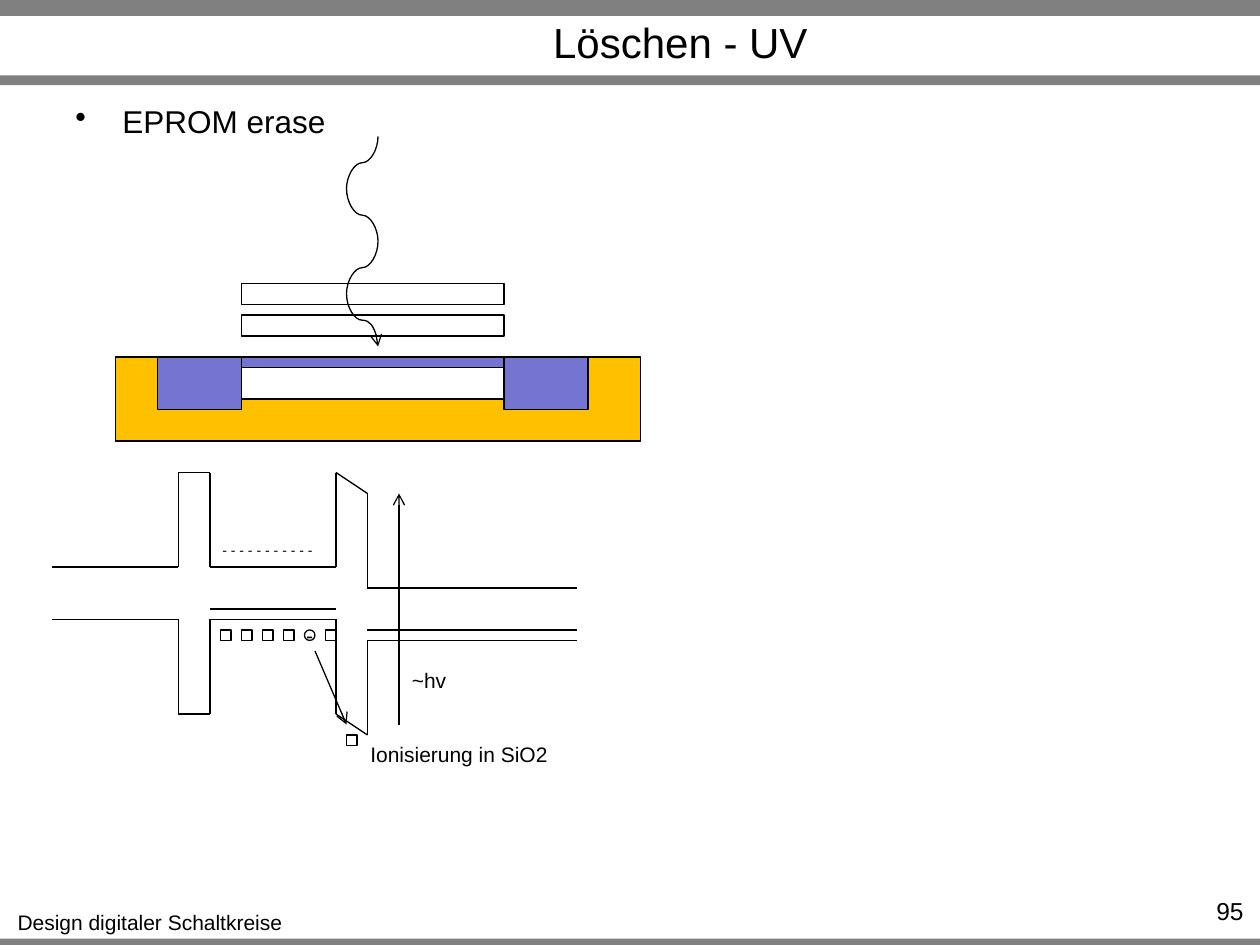
"""Build the slide on erasing an EPROM cell with UV light."""
from dataclasses import dataclass
from itertools import pairwise
from typing import Optional

from lxml import etree
from pptx import Presentation
from pptx import util as u
from pptx.dml.color import RGBColor
from pptx.enum import shapes, text
from pptx.oxml import ns

BLACK = RGBColor(0, 0, 0)
WHITE = RGBColor(0xFF, 0xFF, 0xFF)
GRAY = RGBColor(0x80, 0x80, 0x80)
SUBSTRATE = RGBColor(0xFF, 0xC0, 0x00)
DOPED = RGBColor(0x75, 0x75, 0xD1)
FONT = "Arial"
GRID_CM = 2.54 / 12
LEFT, CENTER, RIGHT = text.PP_ALIGN.LEFT, text.PP_ALIGN.CENTER, text.PP_ALIGN.RIGHT
RECT, OVAL = shapes.MSO_SHAPE.RECTANGLE, shapes.MSO_SHAPE.OVAL
STRAIGHT, CURVE = shapes.MSO_CONNECTOR.STRAIGHT, shapes.MSO_CONNECTOR.CURVE


@dataclass
class Block:
    """A shape placed in grid steps of a twelfth of an inch."""
    left: float
    top: float
    width: float
    height: float
    fill: Optional[RGBColor] = None
    kind: int = RECT


@dataclass
class Label:
    """A text box placed in centimetres."""
    words: str
    left: float
    top: float
    width: float
    height: float
    size: int = 12
    align: int = CENTER
    wrap: bool = False


def grid(steps: float) -> u.Length:
    return u.Cm(steps * GRID_CM)


def write(paragraph, words: str, size: int, align: int) -> None:
    paragraph.alignment = align
    run = paragraph.add_run()
    run.text = words
    run.font.name = FONT
    run.font.size = u.Pt(size)
    run.font.color.rgb = BLACK


def paint(shape, fill: Optional[RGBColor], outlined: bool = True) -> None:
    shape.shadow.inherit = False
    if fill is None:
        shape.fill.background()
    else:
        shape.fill.solid()
        shape.fill.fore_color.rgb = fill
    if outlined:
        shape.line.color.rgb = BLACK
        shape.line.width = u.Pt(0.75)
    else:
        shape.line.fill.background()


def draw_block(slide, block: Block):
    shape = slide.shapes.add_shape(block.kind, grid(block.left), grid(block.top),
                                   grid(block.width), grid(block.height))
    paint(shape, block.fill)
    return shape


def draw_bar(slide, top: float, height: float) -> None:
    bar = slide.shapes.add_shape(RECT, 0, u.Cm(top), u.Cm(25.4), u.Cm(height))
    paint(bar, GRAY, outlined=False)


def draw_label(slide, label: Label):
    box = slide.shapes.add_textbox(u.Cm(label.left), u.Cm(label.top),
                                   u.Cm(label.width), u.Cm(label.height))
    box.text_frame.word_wrap = label.wrap
    paragraph = box.text_frame.paragraphs[0]
    write(paragraph, label.words, label.size, label.align)
    return paragraph


def draw_line(slide, start: tuple, end: tuple, arrow: bool = False, kind: int = STRAIGHT):
    line = slide.shapes.add_connector(kind, *map(grid, start + end))
    line.line.color.rgb = BLACK
    line.line.width = u.Pt(0.75)
    if arrow:
        etree.SubElement(line.line._get_or_add_ln(), ns.qn("a:tailEnd"), type="arrow")
    etree.SubElement(line._element.spPr, ns.qn("a:effectLst"))
    return line


def draw_wave(slide, left: float, top: float, turns: int) -> None:
    for turn in reversed(range(turns)):
        middle = top + 5 * turn + 1
        near, far = (left, middle), (left + 5, middle + 3)
        flipped = turn % 2 == 1
        if flipped:
            near, far = (left + 5, middle), (left, middle + 3)
        half_wave = draw_line(slide, near, far, turn == turns - 1, CURVE)
        half_wave._element.spPr.find(ns.qn("a:xfrm")).set(
            "rot", str((270 if flipped else 90) * 60000))


def add_bullet(paragraph) -> None:
    properties = paragraph._p.get_or_add_pPr()
    indent = u.Cm(0.95)
    properties.set("marL", str(indent))
    properties.set("indent", str(-indent))
    etree.SubElement(properties, ns.qn("a:buChar"), char="•")


def draw_transistor(slide) -> None:
    for block in (
        Block(11, 34, 50, 8, SUBSTRATE),
        Block(23, 27, 25, 2),
        Block(48, 34, 8, 5, DOPED),
        Block(15, 34, 8, 5, DOPED),
        Block(23, 34, 25, 4, WHITE),
        Block(23, 34, 25, 1, DOPED),
        Block(23, 30, 25, 2),
    ):
        draw_block(slide, block)
    draw_line(slide, (15, 34), (56, 34))


def draw_band_diagram(slide) -> None:
    conduction_band = [(5, 54), (17, 54), (17, 45), (20, 45), (20, 54),
                       (32, 54), (32, 45), (35, 47), (35, 56), (55, 56)]
    valence_band = [(5, 59), (17, 59), (17, 68), (20, 68), (20, 59),
                    (32, 59), (32, 68), (35, 70), (35, 61), (55, 61)]
    gate_level = [(20, 58), (32, 58)]
    bulk_level = [(35, 60), (55, 60)]
    for outline in (conduction_band, valence_band, gate_level, bulk_level):
        for start, end in pairwise(outline):
            draw_line(slide, start, end)

    holes = [(column, 60) for column in (21, 23, 25, 27, 31)] + [(33, 70)]
    for left, top in holes:
        draw_block(slide, Block(left, top, 1, 1))
    electron = draw_block(slide, Block(29, 60, 1, 1, kind=OVAL)).text_frame
    electron.margin_left = electron.margin_right = 0
    electron.margin_top = electron.margin_bottom = 0
    electron.word_wrap = False
    electron.vertical_anchor = text.MSO_ANCHOR.MIDDLE
    write(electron.paragraphs[0], "-", 12, CENTER)

    draw_line(slide, (30, 62), (33, 69), arrow=True)
    draw_line(slide, (38, 69), (38, 47), arrow=True)


def main() -> None:
    deck = Presentation()
    deck.slide_width, deck.slide_height = u.Cm(25.4), u.Cm(19.05)
    slide = deck.slides.add_slide(deck.slide_layouts[5])

    title = slide.shapes.title
    title.left, title.top = u.Cm(3.3), u.Cm(0.36)
    title.width, title.height = u.Cm(20.83), u.Cm(0.97)
    title.text_frame.vertical_anchor = text.MSO_ANCHOR.MIDDLE
    write(title.text_frame.paragraphs[0], "Löschen - UV", 24, CENTER)

    for top, height in ((18.92, 0.2), (0, 0.32), (1.52, 0.2)):
        draw_bar(slide, top, height)

    topic = Label("EPROM erase", 1.27, 1.93, 22.86, 1.68, 18, LEFT, True)
    add_bullet(draw_label(slide, topic))
    draw_transistor(slide)
    draw_band_diagram(slide)
    draw_wave(slide, 32, 13, 4)
    for label in (
        Label("Design digitaler Schaltkreise", 0.08, 18.21, 5.89, 0.76),
        Label("95", 23.11, 17.93, 2.21, 0.61, 14, RIGHT, True),
        Label("- - - - - - - - - - -", 4.23, 10.8, 2.33, 0.61, 8, wrap=True),
        Label("~hv", 8.04, 13.34, 1.22, 0.76),
        Label("Ionisierung in SiO2", 7.2, 14.82, 4.11, 0.76),
    ):
        draw_label(slide, label)
    deck.save("out.pptx")


if __name__ == "__main__":
    main()
